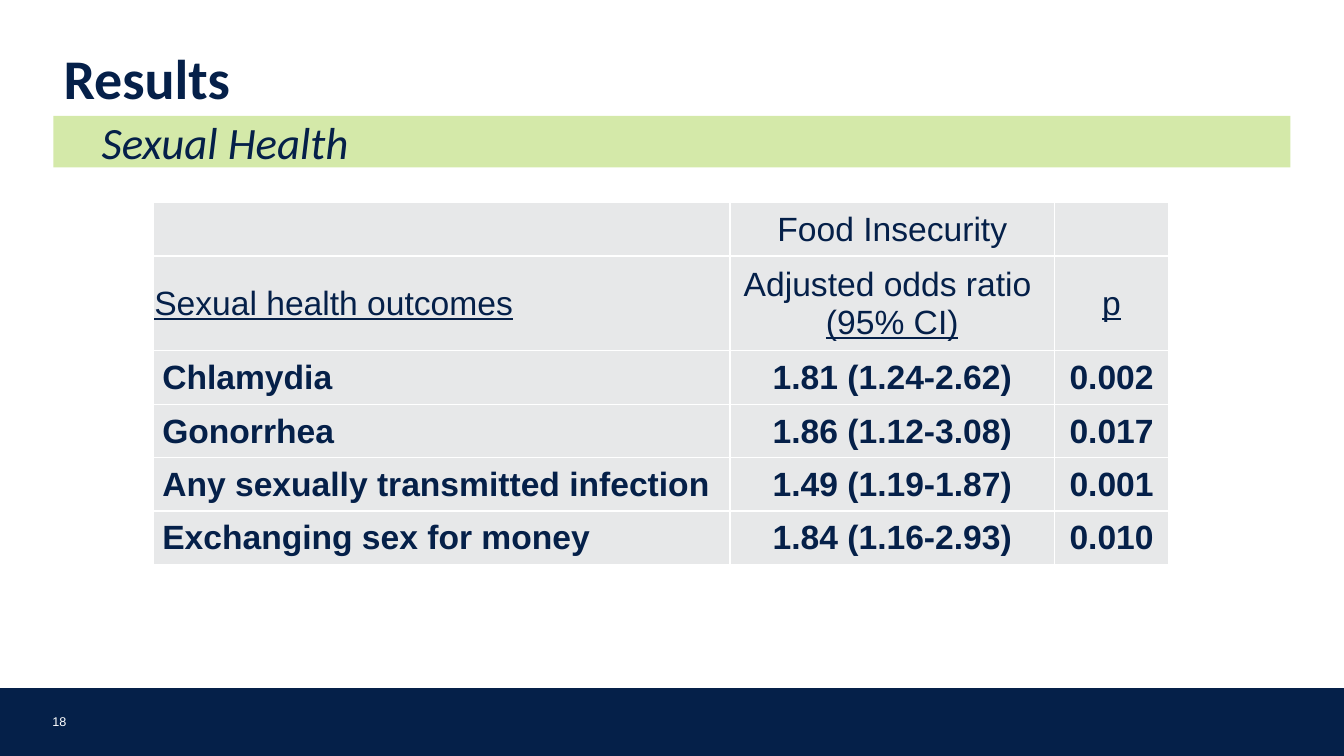
from dataclasses import dataclass

from lxml import etree
from pptx import Presentation
from pptx.dml.color import RGBColor
from pptx.enum import shapes, text
from pptx.oxml import ns
from pptx.util import Emu, Pt

EMU_PER_PX = 9144  # 100 px to the inch

NAVY = RGBColor(0x05, 0x20, 0x49)
GREEN = RGBColor(0xD4, 0xE9, 0xA9)
GRAY = RGBColor(0xE7, 0xE8, 0xE9)
WHITE = RGBColor(0xFF, 0xFF, 0xFF)

COLUMN_WIDTHS = (572, 322, 113)
HEADER_HEIGHTS = (53, 94)
ROW_HEIGHT = 53


@dataclass(frozen=True)
class Box:
    left: int
    top: int
    width: int
    height: int

    def emu(self) -> tuple:
        return tuple(px(n) for n in (self.left, self.top, self.width, self.height))


@dataclass(frozen=True)
class Cell:
    lines: tuple = ()
    bold: bool = False
    underlined: tuple = ()
    centered: bool = True
    inset: int = 1


@dataclass(frozen=True)
class Outcome:
    name: str
    odds_ratio: str
    p_value: str

    def cells(self) -> tuple:
        return (Cell((self.name,), bold=True, centered=False, inset=9),
                Cell((self.odds_ratio,), bold=True),
                Cell((self.p_value,), bold=True))


HEADERS = (
    (Cell(), Cell(("Food Insecurity",)), Cell()),
    (Cell(("Sexual health outcomes",), underlined=(0,), centered=False),
     Cell(("Adjusted odds ratio ", "(95% CI)"), underlined=(1,)),
     Cell(("p",), underlined=(0,))),
)
OUTCOMES = (
    Outcome("Chlamydia", "1.81 (1.24-2.62)", "0.002"),
    Outcome("Gonorrhea", "1.86 (1.12-3.08)", "0.017"),
    Outcome("Any sexually transmitted infection", "1.49 (1.19-1.87)", "0.001"),
    Outcome("Exchanging sex for money", "1.84 (1.16-2.93)", "0.010"),
)


def px(length: int) -> Emu:
    return Emu(length * EMU_PER_PX)


def style_run(run, size: int, name: str, color: RGBColor, bold=False,
              italic=False, underline=False) -> None:
    font = run.font
    font.size, font.name = Pt(size), name
    font.bold, font.italic, font.underline = bold, italic, underline
    font.color.rgb = color


def add_bar(slide, box: Box, fill: RGBColor):
    shape = slide.shapes.add_shape(shapes.MSO_SHAPE.RECTANGLE, *box.emu())
    shape.shadow.inherit = False
    shape.fill.solid()
    shape.fill.fore_color.rgb = fill
    shape.line.fill.background()
    return shape


def add_borders(cell, color: RGBColor) -> None:
    properties = cell._tc.get_or_add_tcPr()
    for side in ("lnL", "lnR", "lnT", "lnB"):
        line = etree.SubElement(properties, ns.qn(f"a:{side}"), w=str(Pt(1)))
        fill = etree.SubElement(line, ns.qn("a:solidFill"))
        etree.SubElement(fill, ns.qn("a:srgbClr"), val=str(color))


def fill_cell(cell, content: Cell) -> None:
    add_borders(cell, WHITE)
    cell.fill.solid()
    cell.fill.fore_color.rgb = GRAY
    cell.vertical_anchor = text.MSO_ANCHOR.MIDDLE
    cell.margin_left = px(content.inset)
    cell.margin_right = cell.margin_top = px(1)
    cell.margin_bottom = 0
    cell.text_frame.text = "\n".join(content.lines)
    for index, paragraph in enumerate(cell.text_frame.paragraphs):
        paragraph.alignment = (text.PP_ALIGN.CENTER if content.centered
                               else text.PP_ALIGN.LEFT)
        for run in paragraph.runs:
            style_run(run, 24, "Arial", NAVY, bold=content.bold,
                      underline=index in content.underlined)


def add_outcome_table(slide, left: int, top: int) -> None:
    rows = HEADERS + tuple(outcome.cells() for outcome in OUTCOMES)
    heights = HEADER_HEIGHTS + (ROW_HEIGHT,) * len(OUTCOMES)
    box = Box(left, top, sum(COLUMN_WIDTHS), sum(heights))
    table = slide.shapes.add_table(len(rows), len(COLUMN_WIDTHS), *box.emu()).table
    table.first_row = table.horz_banding = False
    for column, width in zip(table.columns, COLUMN_WIDTHS):
        column.width = px(width)
    for row, height, contents in zip(table.rows, heights, rows):
        row.height = px(height)
        for cell, content in zip(row.cells, contents):
            fill_cell(cell, content)


def add_title(slide) -> None:
    title = slide.shapes.title
    title.left, title.top, title.width, title.height = Box(53, 48, 885, 68).emu()
    frame = title.text_frame
    frame.text = "Results"
    frame.vertical_anchor = text.MSO_ANCHOR.TOP
    paragraph = frame.paragraphs[0]
    paragraph.alignment = text.PP_ALIGN.LEFT
    paragraph.line_spacing = 0.85
    style_run(paragraph.runs[0], 40, "Calibri", NAVY, bold=True)


def add_subtitle(slide) -> None:
    frame = add_bar(slide, Box(53, 115, 1227, 51), GREEN).text_frame
    frame.text = "Sexual Health"
    frame.vertical_anchor = text.MSO_ANCHOR.TOP
    paragraph = frame.paragraphs[0]
    paragraph.alignment = text.PP_ALIGN.LEFT
    paragraph.line_spacing = 0.9
    paragraph._p.get_or_add_pPr().set("indent", str(px(38)))
    style_run(paragraph.runs[0], 32, "Calibri", NAVY, italic=True)


def add_footer(slide) -> None:
    bar = add_bar(slide, Box(0, 684, 1333, 66), NAVY)
    bar.line.color.rgb = NAVY
    bar.line.width = Pt(1.5)
    frame = slide.shapes.add_textbox(*Box(52, 706, 36, 17).emu()).text_frame
    frame.margin_left = frame.margin_right = 0
    frame.margin_top = frame.margin_bottom = 0
    frame.word_wrap = True
    frame.vertical_anchor = text.MSO_ANCHOR.BOTTOM
    frame.text = "18"
    style_run(frame.paragraphs[0].runs[0], 9, "Arial", WHITE)


def main() -> None:
    presentation = Presentation()
    presentation.slide_width, presentation.slide_height = px(1333), px(750)
    slide = presentation.slides.add_slide(presentation.slide_layouts[5])

    # Footer bar and page number
    add_footer(slide)
    # Odds ratios
    add_outcome_table(slide, 152, 201)
    # Headings
    add_subtitle(slide)
    add_title(slide)

    presentation.save("out.pptx")


if __name__ == "__main__":
    main()
